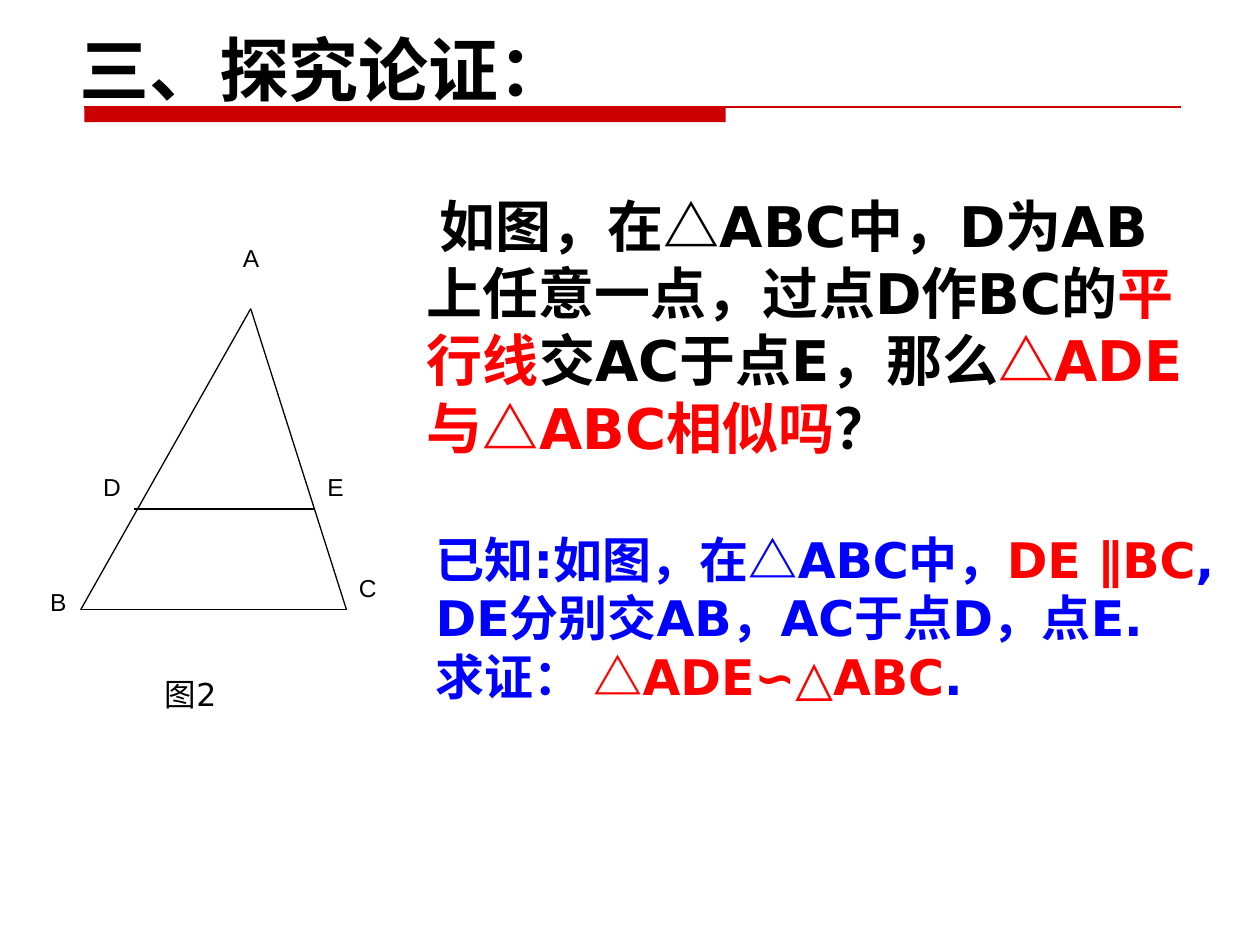
from dataclasses import dataclass

from lxml import etree
from pptx import Presentation
from pptx.dml.color import RGBColor
from pptx.enum.shapes import MSO_CONNECTOR, MSO_SHAPE
from pptx.enum.text import MSO_ANCHOR, PP_ALIGN
from pptx.oxml.ns import qn
from pptx.util import Inches, Pt

STRAIGHT = MSO_CONNECTOR.STRAIGHT
RECTANGLE = MSO_SHAPE.RECTANGLE
TOP, BOTTOM = MSO_ANCHOR.TOP, MSO_ANCHOR.BOTTOM
JUSTIFY = PP_ALIGN.JUSTIFY

SLIDE_WIDTH, SLIDE_HEIGHT = Inches(10), Inches(7.5)
COLUMNS, ROWS = 100, 75


@dataclass(frozen=True)
class Theme:
    black: RGBColor = RGBColor(0x00, 0x00, 0x00)
    red: RGBColor = RGBColor(0xFF, 0x00, 0x00)
    blue: RGBColor = RGBColor(0x00, 0x00, 0xFF)
    rule: RGBColor = RGBColor(0xCC, 0x00, 0x00)
    text_font: str = "DejaVu Sans"
    label_font: str = "Arial"
    title_size: Pt = Pt(40)
    question_size: Pt = Pt(32)
    proof_size: Pt = Pt(28)
    caption_size: Pt = Pt(18)
    label_size: Pt = Pt(14)
    line_width: Pt = Pt(0.75)


THEME = Theme()


def col(count):
    return round(SLIDE_WIDTH * count / COLUMNS)


def row(count):
    return round(SLIDE_HEIGHT * count / ROWS)


def add_line(slide, start, end, color):
    line = slide.shapes.add_connector(
        STRAIGHT, col(start[0]), row(start[1]), col(end[0]), row(end[1]))
    line.line.color.rgb = color
    line.line.width = THEME.line_width
    etree.SubElement(line._element.spPr, qn("a:effectLst"))


def add_bar(slide, left, top, width, height):
    bar = slide.shapes.add_shape(
        RECTANGLE, col(left), row(top), col(width), row(height))
    bar.shadow.inherit = False
    bar.fill.solid()
    bar.fill.fore_color.rgb = THEME.rule
    bar.line.fill.background()


def add_text_frame(slide, left, top, width, height, anchor=TOP):
    frame = slide.shapes.add_textbox(
        col(left), row(top), col(width), row(height)).text_frame
    frame.word_wrap = True
    frame.vertical_anchor = anchor
    return frame


def set_indent(paragraph, margin, first_line):
    properties = paragraph._p.get_or_add_pPr()
    properties.set("marL", str(col(margin)))
    properties.set("indent", str(col(first_line)))


def set_tab(paragraph, position):
    tabs = etree.SubElement(paragraph._p.get_or_add_pPr(), qn("a:tabLst"))
    etree.SubElement(tabs, qn("a:tab"), pos=str(col(position)), algn="l")


def write(paragraph, parts, size, font=THEME.text_font, bold=False):
    """Fill a paragraph with (wording, colour) parts in one type style."""
    paragraph.font.size = size
    paragraph.font.name = font
    paragraph.font.bold = bold
    for wording, color in parts:
        run = paragraph.add_run()
        run.text = wording
        run.font.color.rgb = color


def add_title(slide):
    add_bar(slide, 6.7, 8.5, 50.9, 1.2)
    add_line(slide, (6.7, 8.5), (93.7, 8.5), THEME.rule)
    title = add_text_frame(slide, 5.3, 2.1, 87.5, 7.2, BOTTOM)
    write(title.paragraphs[0], [("三、探究论证：", THEME.black)],
          THEME.title_size, bold=True)


def add_triangle(slide):
    apex, left_base, right_base = (19.9, 24.5), (6.4, 48.4), (27.5, 48.4)
    parallel = (10.6, 40.4), (25, 40.4)
    for start, end in [(apex, left_base), (apex, right_base),
                       (left_base, right_base), parallel]:
        add_line(slide, start, end, THEME.black)

    vertex_labels = {"A": (18.3, 18.8), "B": (3, 46.1), "C": (27.5, 45),
                     "D": (7.2, 37), "E": (25, 37)}
    for letter, (left, top) in vertex_labels.items():
        label = add_text_frame(slide, left, top, 4.1, 5.8).paragraphs[0]
        label.alignment = JUSTIFY
        write(label, [(letter, THEME.black)], THEME.label_size,
              THEME.label_font)

    caption = add_text_frame(slide, 12.1, 53.1, 6.6, 4)
    write(caption.paragraphs[0], [("图2", THEME.black)], THEME.caption_size)


def add_question(slide):
    question = add_text_frame(slide, 27.8, 14.7, 67.7, 22.8).paragraphs[0]
    set_indent(question, 5.1, 1)
    write(question, [
        ("如图，在△ABC中，D为AB上任意一点，过点D作BC的", THEME.black),
        ("平行线", THEME.red),
        ("交AC于点E，那么", THEME.black),
        ("△ADE与△ABC相似吗", THEME.red),
        ("？", THEME.black),
    ], THEME.question_size, bold=True)


def add_proof(slide):
    proof = add_text_frame(slide, 33.6, 41.5, 64.5, 15.1)
    given, to_prove = proof.paragraphs[0], proof.add_paragraph()
    set_tab(given, 13.3)
    write(given, [
        ("已知:如图，在△ABC中，", THEME.blue),
        ("DE ∥BC", THEME.red),
        (",\tDE分别交AB，AC于点D，点E.", THEME.blue),
    ], THEME.proof_size, bold=True)
    write(to_prove, [
        ("求证： ", THEME.blue),
        ("△ADE∽△ABC", THEME.red),
        (".", THEME.blue),
    ], THEME.proof_size, bold=True)


def main():
    presentation = Presentation()
    presentation.slide_width = SLIDE_WIDTH
    presentation.slide_height = SLIDE_HEIGHT
    slide = presentation.slides.add_slide(presentation.slide_layouts[6])
    add_title(slide)
    add_question(slide)
    add_triangle(slide)
    add_proof(slide)
    presentation.save("out.pptx")


if __name__ == "__main__":
    main()
